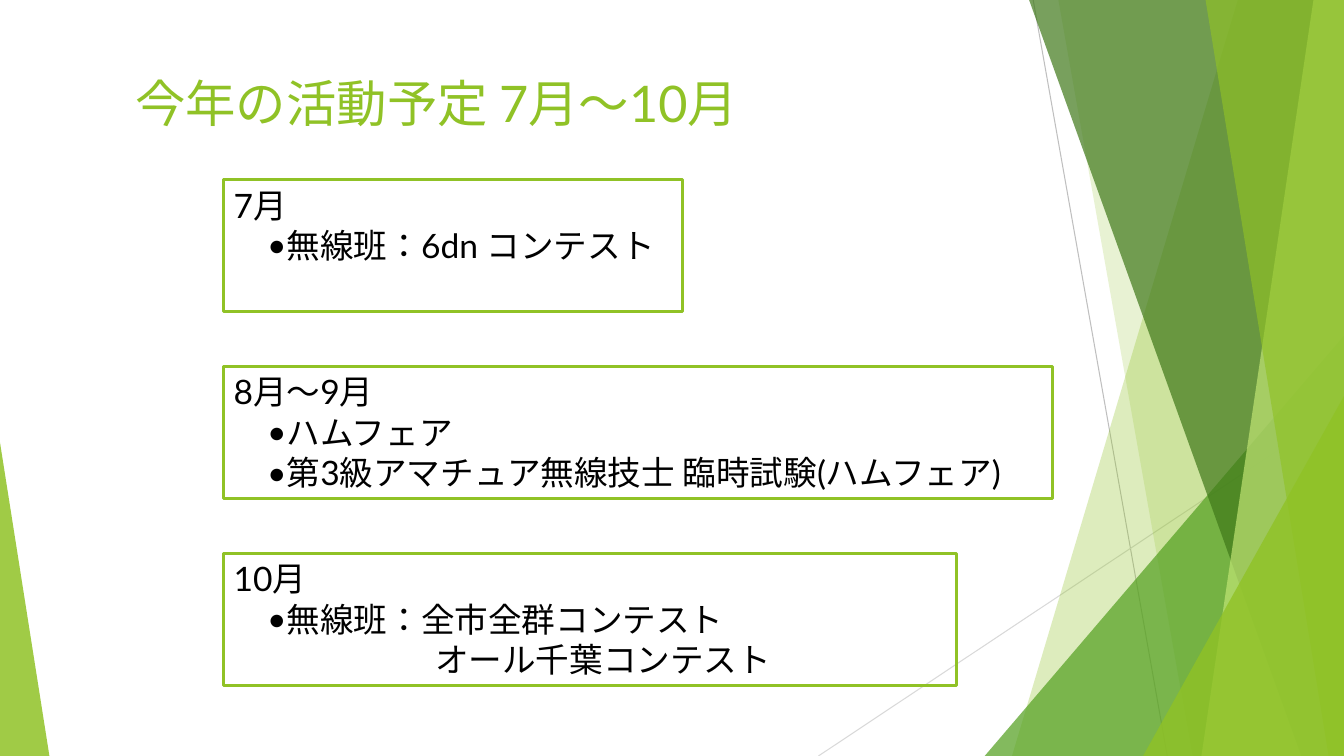
from lxml.etree import SubElement
from pptx import Presentation
from pptx.dml.color import RGBColor
from pptx.enum.lang import MSO_LANGUAGE_ID as LANG
from pptx.enum.shapes import MSO_CONNECTOR as CONN, MSO_SHAPE as SHAPE
from pptx.enum.text import MSO_ANCHOR as ANCHOR, MSO_AUTO_SIZE as AUTOSIZE, PP_ALIGN as ALIGN
from pptx.oxml.ns import qn
from pptx.util import Pt

COLORS = {
    "lime": "90C226", "green": "54A021", "forest": "3F7819", "pale": "C0E474",
    "text": "000000", "gray": "BFBFBF", "silver": "D9D9D9",
}
W, H = 960, 540
FONT = "Lato"
BULLET_LEFT, BULLET_HANG = 32, 8


def rgb(name):
    return RGBColor.from_string(COLORS[name])


def put(obj, values):
    for key, value in values.items():
        setattr(obj, key, value)


def paint(sp, color, alpha):
    sp.shadow.inherit = False
    sp.fill.solid()
    sp.fill.fore_color.rgb = rgb(color)
    sp.line.fill.background()
    clr = sp.element.spPr.find(qn("a:solidFill"))[0]
    SubElement(clr, qn("a:alpha"), val=str(alpha * 1000))


def add_ray(s, x1, y1, x2, y2, color):
    c = s.shapes.add_connector(CONN.STRAIGHT, Pt(x1), Pt(y1), Pt(x2), Pt(y2))
    c.line.width = Pt(0.75)
    c.line.color.rgb = rgb(color)
    SubElement(c.element.spPr, qn("a:effectLst"))


def add_band(s, box, top, bottom, color, alpha):
    x, y, w, h = box
    corners = [(x + top, y), (x + w, y), (x + w, y + h), (x + bottom, y + h)]
    points = [(Pt(px), Pt(py)) for px, py in corners]
    fb = s.shapes.build_freeform(*points[0], scale=1.0)
    fb.add_line_segments(points[1:], close=True)
    paint(fb.convert_to_shape(), color, alpha)


def add_corner(s, x, y, w, h, apex, color, alpha):
    sp = s.shapes.add_shape(SHAPE.ISOSCELES_TRIANGLE, Pt(x), Pt(y), Pt(w), Pt(h))
    sp.adjustments[0] = apex
    paint(sp, color, alpha)


def add_backdrop(s, box):
    x, y, w, h = box
    right, bottom = x + w, y + h
    add_ray(s, right - 222, y, right - 126.2, bottom, "gray")
    add_ray(s, right, bottom - 249.8, right - 375.4, bottom, "silver")
    add_band(s, box, 884.2, 722.9, "lime", 30)
    add_band(s, box, 756, 851.8, "lime", 20)
    add_corner(s, right - 256.6, bottom - 300.2, 256.6, 300.2, 1, "green", 72)
    add_band(s, box, 735.1, 929.5, "forest", 70)
    add_band(s, box, 938.2, 858.2, "pale", 70)
    add_band(s, box, 861.1, 949, "lime", 65)
    add_corner(s, right - 143.5, bottom - 257, 143.5, 257, 1, "lime", 80)
    add_corner(s, x, bottom - 223.9, 35.3, 223.9, 0, "lime", 85)


def write_line(p, text, size, color, left, hang=0):
    put(p, {"alignment": ALIGN.LEFT, "line_spacing": 1.0, "space_before": Pt(0)})
    pPr = p._p.get_or_add_pPr()
    pPr.set("marL", str(Pt(left)))
    pPr.set("indent", str(Pt(-hang)))
    if hang:
        SubElement(pPr, qn("a:buFont"), typeface=FONT)
        SubElement(pPr, qn("a:buChar"), char="•")
    r = p.add_run()
    r.text = text
    put(r.font, {"name": FONT, "size": Pt(size), "language_id": LANG.JAPANESE})
    r.font.color.rgb = rgb(color)


def format_frame(tf):
    put(tf, {
        "word_wrap": True, "auto_size": AUTOSIZE.NONE, "vertical_anchor": ANCHOR.TOP,
        "margin_left": Pt(7.2), "margin_right": Pt(0),
        "margin_top": Pt(3.6), "margin_bottom": Pt(3.6),
    })


def add_title(s, box, text):
    sp = s.shapes.title
    put(sp, dict(zip(("left", "top", "width", "height"), map(Pt, box))))
    format_frame(sp.text_frame)
    write_line(sp.text_frame.paragraphs[0], text, 36, "lime", 36)
    sp.element.getparent().append(sp.element)


def add_month(s, box, month, events, more):
    sp = s.shapes.add_shape(SHAPE.RECTANGLE, *map(Pt, box))
    sp.shadow.inherit = False
    sp.fill.background()
    sp.line.color.rgb = rgb("lime")
    sp.line.width = Pt(2.25)
    tf = sp.text_frame
    format_frame(tf)
    write_line(tf.paragraphs[0], month, 24, "text", 0)
    for event in events:
        write_line(tf.add_paragraph(), event, 24, "text", BULLET_LEFT, BULLET_HANG)
    for event in more:
        write_line(tf.add_paragraph(), event, 24, "text", 144)


def add_schedule(s, box, months):
    x, y, height, pitch = box
    for i, (width, *lines) in enumerate(months):
        add_month(s, (x, y + i * pitch, width, height), *lines)


def main():
    prs = Presentation()
    put(prs, {"slide_width": Pt(W), "slide_height": Pt(H)})
    s = prs.slides.add_slide(prs.slide_layouts[5])
    add_backdrop(s, (0, 0, W, H))
    add_title(s, (53.3, 48.2, 676.8, 56.2), "今年の活動予定 7月～10月")
    months = [
        (327.6, "7月", ["無線班：6dn コンテスト"], []),
        (591.8, "8月～9月",
         ["ハムフェア", "第3級アマチュア無線技士 臨時試験(ハムフェア)"], []),
        (523.4, "10月", ["無線班：全市全群コンテスト"], ["オール千葉コンテスト"]),
    ]
    add_schedule(s, (159.8, 128.2, 94.3, 133.5), months)
    prs.save("out.pptx")


if __name__ == "__main__":
    main()
